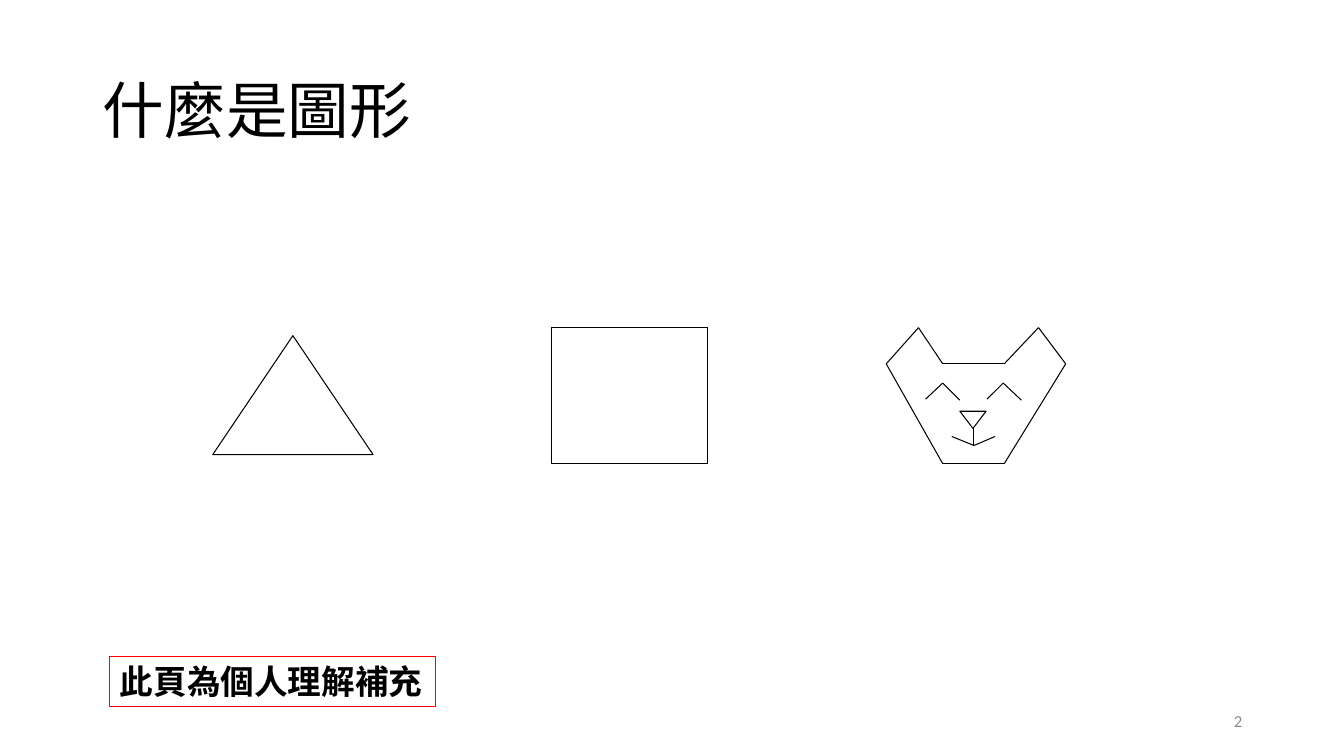
"""Build a slide showing what shapes are: a triangle, a rectangle and a cat's face."""
from itertools import pairwise

from lxml import etree
from pptx import Presentation
from pptx.dml.color import RGBColor
from pptx.enum.shapes import MSO_CONNECTOR, MSO_SHAPE
from pptx.enum.text import MSO_ANCHOR, MSO_AUTO_SIZE, PP_ALIGN
from pptx.oxml.ns import qn
from pptx.util import Pt

STRAIGHT = MSO_CONNECTOR.STRAIGHT
TRIANGLE = MSO_SHAPE.ISOSCELES_TRIANGLE
RECTANGLE = MSO_SHAPE.RECTANGLE
MIDDLE = MSO_ANCHOR.MIDDLE
TOP = MSO_ANCHOR.TOP
LEFT = PP_ALIGN.LEFT
RIGHT = PP_ALIGN.RIGHT
NO_FIT = MSO_AUTO_SIZE.NONE
GROW = MSO_AUTO_SIZE.SHAPE_TO_FIT_TEXT
SHRINK = MSO_AUTO_SIZE.TEXT_TO_FIT_SHAPE

EMU_PER_PX = 9144
SLIDE_SIZE = (1333, 750)
FONT = "Calibri"
BLACK = "000000"
GREY = "8C8C8C"
RED = "FF0000"

TITLE = ("什麼是圖形", (92, 40, 1150, 145))
PAGE_NUMBER = ("2", (942, 695, 300, 40))
NOTE = ("此頁為個人理解補充", (109, 651, 323, 50))

BASIC_SHAPES = [
    (TRIANGLE, (211, 333, 159, 118)),
    (RECTANGLE, (547, 325, 155, 135)),
]
CAT_NOSE = (952, 408, 26, 17)
CAT_STROKES = [
    [(911, 325), (935, 361), (996, 361), (1030, 325), (1057, 361),
     (996, 460), (935, 460), (879, 361), (911, 325)],
    [(918, 396), (935, 380), (952, 397)],
    [(979, 396), (995, 380), (1013, 397)],
    [(966, 424), (966, 442)],
    [(944, 433), (966, 442), (987, 433)],
]


def px(*lengths):
    return [length * EMU_PER_PX for length in lengths]


def color(value):
    return RGBColor.from_string(value)


def set_line(item, value):
    item.line.color.rgb = color(value)
    item.line.width = Pt(0.75)


def add_outline(shapes, kind, box):
    shape = shapes.add_shape(kind, *px(*box))
    shape.shadow.inherit = False
    shape.fill.background()
    set_line(shape, BLACK)
    return shape


def add_stroke(shapes, points):
    for start, end in pairwise(points):
        connector = shapes.add_connector(STRAIGHT, *px(*start, *end))
        set_line(connector, BLACK)
        properties = connector.element.find(qn("p:spPr"))
        etree.SubElement(properties, qn("a:effectLst"))


def write(shape, text, size, value=BLACK, bold=False, align=LEFT,
          anchor=MIDDLE, wrap=True, fit=NO_FIT):
    frame = shape.text_frame
    frame.word_wrap = wrap
    frame.auto_size = fit
    frame.vertical_anchor = anchor
    paragraph = frame.paragraphs[0]
    paragraph.alignment = align
    run = paragraph.add_run()
    run.text = text
    run.font.name = FONT
    run.font.size = Pt(size)
    run.font.bold = bold
    run.font.color.rgb = color(value)
    return paragraph


def main():
    presentation = Presentation()
    presentation.slide_width, presentation.slide_height = px(*SLIDE_SIZE)
    slide = presentation.slides.add_slide(presentation.slide_layouts[5])
    shapes = slide.shapes

    text, box = TITLE
    title = shapes.title
    title.left, title.top, title.width, title.height = px(*box)
    write(title, text, 44, fit=SHRINK).line_spacing = 0.9

    text, box = PAGE_NUMBER
    write(shapes.add_textbox(*px(*box)), text, 12, GREY, align=RIGHT)

    for kind, box in BASIC_SHAPES:
        add_outline(shapes, kind, box)

    cat = shapes.add_group_shape()
    for points in CAT_STROKES:
        add_stroke(cat.shapes, points)
    add_outline(cat.shapes, TRIANGLE, CAT_NOSE).rotation = 180

    text, box = NOTE
    note = shapes.add_textbox(*px(*box))
    set_line(note, RED)
    write(note, text, 24, bold=True, anchor=TOP, wrap=False, fit=GROW)

    presentation.save("out.pptx")


if __name__ == "__main__":
    main()
